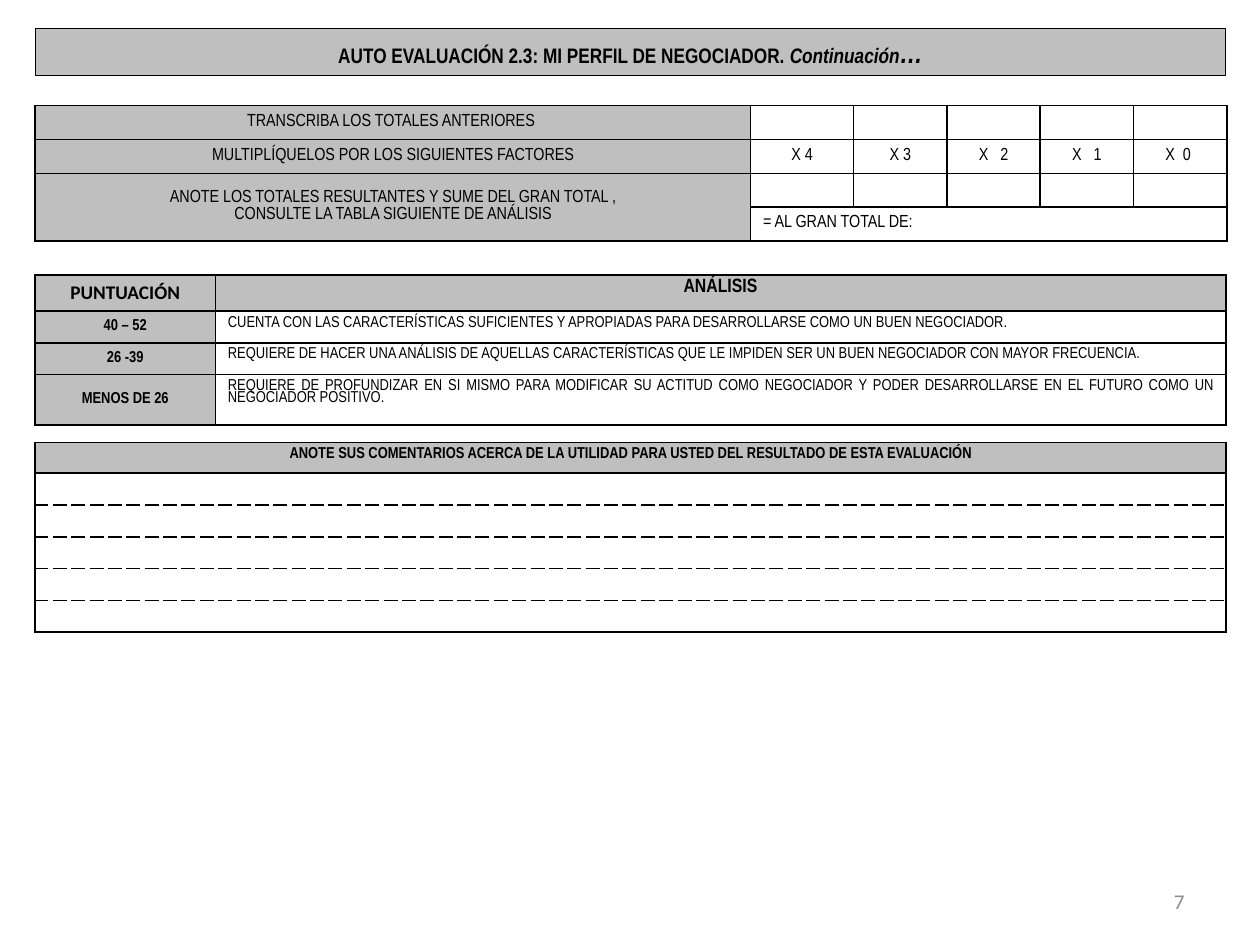
from dataclasses import dataclass

from lxml.etree import SubElement
from pptx import Presentation
from pptx.dml.color import RGBColor
from pptx.enum.text import MSO_ANCHOR, MSO_AUTO_SIZE, PP_ALIGN
from pptx.oxml.ns import qn
from pptx.util import Cm, Pt

GRAY, WHITE, BLACK = "BFBFBF", "FFFFFF", "000000"
NARROW = "Arial Narrow"
LEFT, WIDTH = 0.71, 24.0
MID, TOP = MSO_ANCHOR.MIDDLE, MSO_ANCHOR.TOP
CENTER, JUST = PP_ALIGN.CENTER, PP_ALIGN.JUSTIFY


@dataclass
class Box:
    text: str = ""
    fill: str = WHITE
    size: float = 10
    bold: bool = False
    align: PP_ALIGN = CENTER
    anchor: MSO_ANCHOR = MID
    before: float = 0
    font: str = NARROW
    space: float = 0.8
    top: str = "solid"
    base: str = "solid"


def color(code: str) -> RGBColor:
    return RGBColor.from_string(code)


def style(run, size: float, font: str = NARROW, bold: bool = False, tint: str = BLACK) -> None:
    run.font.size, run.font.name, run.font.bold = Pt(size), font, bold
    run.font.color.rgb = color(tint)


def edge(cell, top: str, base: str) -> None:
    """Draw the four borders of a cell, each with its own dash."""
    props = cell._tc.get_or_add_tcPr()
    for side, dash in (("L", "solid"), ("R", "solid"), ("T", top), ("B", base)):
        line = SubElement(props, qn(f"a:ln{side}"), w=str(Pt(1)))
        fill = SubElement(line, qn("a:solidFill"))
        SubElement(fill, qn("a:srgbClr"), val=BLACK)
        SubElement(line, qn("a:prstDash"), val=dash)


def paint(cell, box: Box) -> None:
    edge(cell, box.top, box.base)
    cell.fill.solid()
    cell.fill.fore_color.rgb = color(box.fill)
    cell.vertical_anchor = box.anchor
    cell.text_frame.text = box.text
    for para in cell.text_frame.paragraphs:
        para.alignment, para.line_spacing = box.align, box.space
        para.space_before = Pt(box.before)
        for run in para.runs:
            style(run, box.size, box.font, box.bold)
        if not para.runs:  # keeps an empty row low
            SubElement(para._p, qn("a:endParaRPr"), sz=str(int(box.size * 100)))


def grid(slide, top: float, cols: list[float], rows: list[float], boxes: list[list[Box]]):
    frame = slide.shapes.add_table(len(rows), len(cols), Cm(LEFT), Cm(top), Cm(WIDTH), Cm(sum(rows)))
    table = frame.table
    table.first_row = table.horz_banding = False
    for col, wide in zip(table.columns, cols):
        col.width = Cm(wide)
    for row, high, line in zip(table.rows, rows, boxes):
        row.height = Cm(high)
        for cell, box in zip(row.cells, line):
            paint(cell, box)
    return table


def title(slide) -> None:
    bar = slide.shapes.title
    bar.left, bar.top, bar.width, bar.height = Cm(LEFT), Cm(0.58), Cm(WIDTH), Cm(0.94)
    bar.fill.solid()
    bar.fill.fore_color.rgb = color(GRAY)
    bar.line.color.rgb = color(BLACK)
    bar.line.width = Pt(0.75)
    frame = bar.text_frame
    frame.auto_size, frame.vertical_anchor = MSO_AUTO_SIZE.NONE, TOP
    para = frame.paragraphs[0]
    para.alignment, para.space_before = CENTER, Pt(2)
    parts = (("AUTO EVALUACIÓN 2.3: MI PERFIL DE NEGOCIADOR. ", 12, False),
             ("Continuación", 12, True), ("…", 16, True))
    for text, size, slant in parts:
        run = para.add_run()
        run.text = text
        style(run, size, bold=True)
        run.font.italic = slant


def totals(slide) -> None:
    def label(text: str) -> Box:
        return Box(text, GRAY, before=2)

    blank = [Box()] * 5
    marks = [Box(text, before=2) for text in ("X 4", "X 3", "X   2", "X   1", "X  0 ")]
    table = grid(slide, 2.13, [14.42, 2.08] + [1.88] * 4, [0.68] * 4, [
        [label("TRANSCRIBA LOS TOTALES ANTERIORES "), *blank],
        [label("MULTIPLÍQUELOS POR LOS SIGUIENTES FACTORES"), *marks],
        [label("ANOTE LOS TOTALES RESULTANTES Y SUME DEL GRAN TOTAL ,\n"
               "CONSULTE LA TABLA SIGUIENTE DE ANÁLISIS"), *blank],
        [Box(fill=GRAY), Box("= AL GRAN TOTAL DE:", align=JUST, before=2), *blank[1:]],
    ])
    table.cell(2, 0).merge(table.cell(3, 0))
    table.cell(3, 1).merge(table.cell(3, 5))


def scores(slide) -> None:
    notes = {
        "40 – 52": "CUENTA CON LAS CARACTERÍSTICAS SUFICIENTES Y APROPIADAS PARA "
                   "DESARROLLARSE COMO UN BUEN NEGOCIADOR.",
        "26 -39": "REQUIERE DE HACER UNA ANÁLISIS DE AQUELLAS CARACTERÍSTICAS QUE LE "
                  "IMPIDEN SER UN BUEN NEGOCIADOR CON MAYOR FRECUENCIA.",
        "MENOS DE 26": "REQUIERE DE PROFUNDIZAR EN SI MISMO PARA MODIFICAR SU ACTITUD COMO "
                       "NEGOCIADOR Y PODER DESARROLLARSE EN EL FUTURO COMO UN NEGOCIADOR POSITIVO.",
    }
    head = [Box("PUNTUACIÓN", GRAY, 11, True, anchor=TOP, font="Calibri", space=1),
            Box("ANÁLISIS", GRAY, 11, True, anchor=TOP)]
    body = [[Box(key, GRAY, 9, True), Box(note, size=9, align=JUST, anchor=TOP)]
            for key, note in notes.items()]
    grid(slide, 5.54, [3.63, 20.37], [0.71, 0.64, 0.64, 1.01], [head, *body])


def remarks(slide) -> None:
    count, dash = 5, "sysDash"
    head = Box("ANOTE SUS COMENTARIOS ACERCA DE LA UTILIDAD PARA USTED DEL RESULTADO "
               "DE ESTA EVALUACIÓN", GRAY, 9, True, anchor=TOP)
    lines = [[Box(size=9, top=dash if i else "solid", base=dash if i < count - 1 else "solid")]
             for i in range(count)]
    grid(slide, 8.92, [WIDTH], [0.62] * (count + 1), [[head], *lines])


def number(slide) -> None:
    frame = slide.shapes.add_textbox(Cm(18.21), Cm(17.65), Cm(5.92), Cm(1.02)).text_frame
    frame.word_wrap, frame.vertical_anchor = True, MID
    frame.text = "7"
    para = frame.paragraphs[0]
    para.alignment = PP_ALIGN.RIGHT
    style(para.runs[0], 12, "Calibri", tint="8C8C8C")


def main() -> None:
    deck = Presentation()
    deck.slide_width, deck.slide_height = Cm(25.4), Cm(19.05)
    slide = deck.slides.add_slide(deck.slide_layouts[5])
    for draw in (title, totals, scores, remarks, number):
        draw(slide)
    deck.save("out.pptx")


if __name__ == "__main__":
    main()
